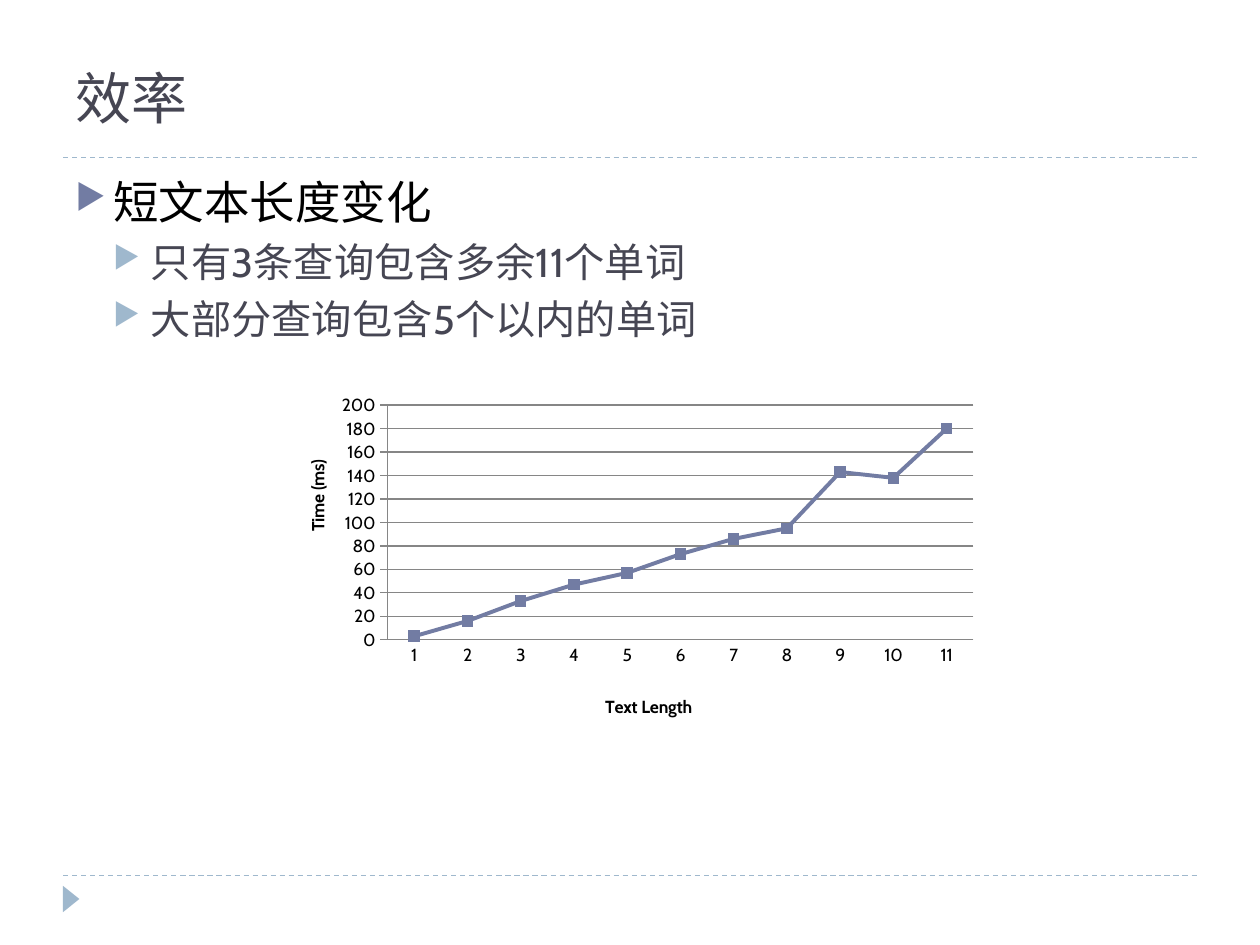
from dataclasses import dataclass

from lxml.etree import SubElement
from pptx import Presentation
from pptx.chart.data import CategoryChartData
from pptx.dml.color import RGBColor
from pptx.enum.chart import XL_CHART_TYPE, XL_MARKER_STYLE, XL_TICK_MARK
from pptx.enum.dml import MSO_LINE
from pptx.enum.shapes import MSO_CONNECTOR, MSO_SHAPE
from pptx.enum.text import MSO_ANCHOR, PP_ALIGN
from pptx.oxml import parse_xml
from pptx.oxml.ns import nsdecls, qn
from pptx.util import Pt


@dataclass(frozen=True)
class Theme:
    ink: RGBColor = RGBColor(0x46, 0x46, 0x53)
    black: RGBColor = RGBColor(0, 0, 0)
    accent: RGBColor = RGBColor(0x72, 0x7C, 0xA3)
    pale: RGBColor = RGBColor(0x9F, 0xB8, 0xCD)
    grid: RGBColor = RGBColor(0x86, 0x86, 0x86)
    heading: str = "Roboto Slab"
    body: str = "Cabin"
    title_size: int = 32
    level_sizes: tuple = (26, 23)
    chart_size: int = 10


def apply(obj, values):
    for name, value in values.items():
        setattr(obj, name, value)


class Deck:
    def __init__(self, prs, theme):
        self.theme = theme
        self.s = prs.slides.add_slide(prs.slide_layouts[6])

    def font(self, font, name, size, color, bold=False):
        apply(font, {"name": name, "size": Pt(size), "bold": bold})
        font.color.rgb = color

    def rule(self, y):
        sp = self.s.shapes.add_connector(
            MSO_CONNECTOR.STRAIGHT, Pt(36), Pt(y), Pt(684), Pt(y))
        apply(sp.line, {"width": Pt(0.75), "dash_style": MSO_LINE.DASH})
        sp.line.color.rgb = self.theme.pale
        SubElement(sp._element.spPr, qn("a:effectLst"))

    def triangle(self, x, y, w, h):
        sp = self.s.shapes.add_shape(
            MSO_SHAPE.ISOSCELES_TRIANGLE, Pt(x), Pt(y), Pt(w), Pt(h))
        sp.rotation = 90
        sp.shadow.inherit = False
        sp.fill.solid()
        sp.fill.fore_color.rgb = self.theme.pale
        sp.line.fill.background()

    def frame(self, x, y, w, h, anchor):
        tf = self.s.shapes.add_textbox(Pt(x), Pt(y), Pt(w), Pt(h)).text_frame
        apply(tf, {"word_wrap": True, "vertical_anchor": anchor})
        return tf

    def title(self, text, *box):
        p = self.frame(*box, MSO_ANCHOR.BOTTOM).paragraphs[0]
        p.alignment = PP_ALIGN.LEFT
        r = p.add_run()
        r.text = text
        self.font(r.font, self.theme.heading, self.theme.title_size, self.theme.ink)

    def bullets(self, items, *box):
        t = self.theme
        tf = self.frame(*box, MSO_ANCHOR.TOP)
        for i, (level, text) in enumerate(items):
            p = tf.add_paragraph() if i else tf.paragraphs[0]
            apply(p, {"level": level, "space_before": Pt(6 - level)})
            r = p.add_run()
            r.text = text
            self.font(r.font, t.body, t.level_sizes[level], (t.black, t.ink)[level])
            pPr = p._p.get_or_add_pPr()
            pPr.set("marL", str(Pt(21.6 * (level + 1))))
            pPr.set("indent", str(-Pt(21.6)))
            color = SubElement(pPr, qn("a:buClr"))
            SubElement(color, qn("a:srgbClr"), val=str((t.accent, t.pale)[level]))
            SubElement(pPr, qn("a:buSzPct"), val="76000")
            SubElement(pPr, qn("a:buChar"), char="▶")

    def layout(self, parent, index, **values):
        old = parent.find(qn("c:layout"))
        if old is not None:
            parent.remove(old)
        modes = {"xMode": "edge", "yMode": "edge"}
        if "w" in values:
            modes = {"layoutTarget": "inner", **modes}
        parts = "".join(f'<c:{k} val="{v}"/>' for k, v in {**modes, **values}.items())
        parent.insert(index, parse_xml(
            f'<c:layout {nsdecls("c")}><c:manualLayout>{parts}</c:manualLayout></c:layout>'))

    def axis(self, axis, title, x, y, **values):
        t = self.theme
        apply(axis, {"minor_tick_mark": XL_TICK_MARK.NONE, **values})
        apply(axis.format.line, {"width": Pt(0.75)})
        axis.format.line.color.rgb = t.grid
        axis.axis_title.text_frame.text = title
        r = axis.axis_title.text_frame.paragraphs[0].runs[0]
        self.font(r.font, t.body, t.chart_size, t.black, True)
        self.layout(axis.axis_title._element, 1, x=x, y=y)

    def line_chart(self, categories, values, x_title, y_title, x, y, w, h):
        t = self.theme
        data = CategoryChartData(number_format="General")
        data.categories = categories
        data.add_series("Series 1", values)
        chart = self.s.shapes.add_chart(
            XL_CHART_TYPE.LINE_MARKERS_STACKED, Pt(x), Pt(y), Pt(w), Pt(h), data).chart
        apply(chart, {"has_legend": False, "has_title": False})
        self.font(chart.font, t.body, t.chart_size, t.black)
        self.axis(chart.category_axis, x_title, 0.46, 0.89,
                  major_tick_mark=XL_TICK_MARK.NONE, has_major_gridlines=False)
        self.axis(chart.value_axis, y_title, 0.04, 0.2,
                  major_tick_mark=XL_TICK_MARK.OUTSIDE, has_major_gridlines=True,
                  minimum_scale=0, maximum_scale=200, major_unit=20)
        grid = chart.value_axis.major_gridlines.format.line
        grid.width = Pt(0.75)
        grid.color.rgb = t.grid
        plot = chart.plots[0]
        plot.vary_by_categories = False
        series = plot.series[0]
        series.smooth = False
        series.format.line.width = Pt(2.25)
        series.format.line.color.rgb = t.accent
        apply(series.marker, {"style": XL_MARKER_STYLE.SQUARE, "size": 6})
        series.marker.format.fill.solid()
        series.marker.format.fill.fore_color.rgb = t.accent
        series.marker.format.line.color.rgb = t.accent
        self.layout(chart._chartSpace.chart.plotArea, 0, x=0.16, y=0.05, w=0.82, h=0.69)


def main():
    prs = Presentation()
    apply(prs, {"slide_width": Pt(720), "slide_height": Pt(540)})
    deck = Deck(prs, Theme())
    for y in (500.4, 90):
        deck.rule(y)
    deck.triangle(33.1, 509, 15.1, 9.4)
    deck.title("效率", 36, 12.2, 648, 66.2)
    deck.bullets([
        (0, "短文本长度变化"),
        (1, "只有3条查询包含多余11个单词"),
        (1, "大部分查询包含5个以内的单词"),
    ], 36, 95.8, 648, 388.8)
    times = (3, 16, 33, 47, 57, 73, 86, 95, 143, 138, 180)
    deck.line_chart(range(1, len(times) + 1), times, "Text Length", "Time (ms)",
                    156.2, 221.8, 408.2, 194.4)
    prs.save("out.pptx")


if __name__ == "__main__":
    main()
